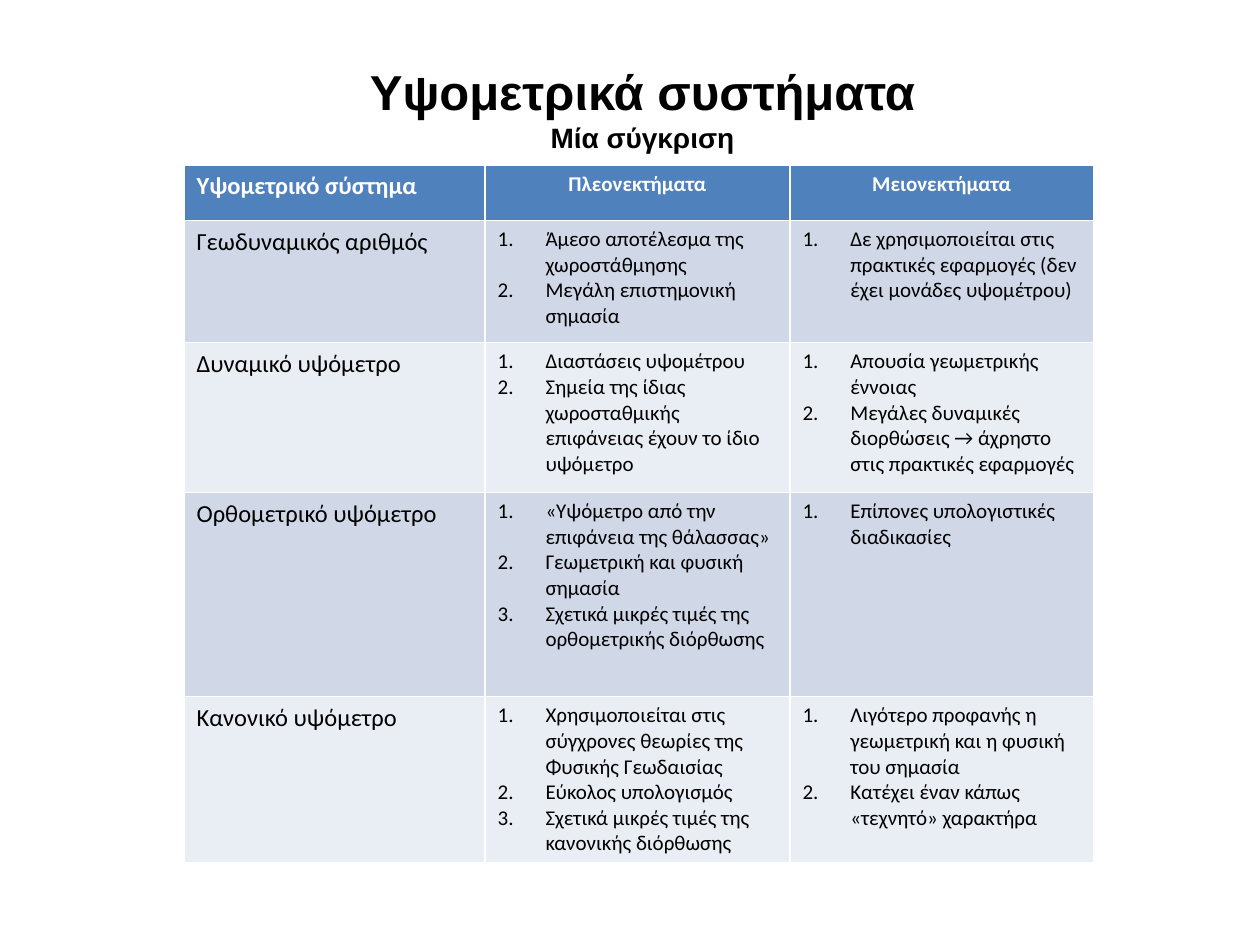
"""Build a slide comparing the advantages and drawbacks of height systems."""
from lxml.etree import SubElement
from pptx import Presentation
from pptx.dml.color import RGBColor
from pptx.enum.text import MSO_ANCHOR, PP_ALIGN
from pptx.oxml.ns import qn
from pptx.util import Inches, Pt

BLACK = RGBColor(0x00, 0x00, 0x00)
WHITE = RGBColor(0xFF, 0xFF, 0xFF)
HEADER_BLUE = RGBColor(0x4F, 0x81, 0xBD)
BANDS = (RGBColor(0xD0, 0xD8, 0xE8), RGBColor(0xE9, 0xED, 0xF4))

TITLE = "Υψομετρικά συστήματα"
SUBTITLE = "Μία σύγκριση"
HEADERS = ("Υψομετρικό σύστημα", "Πλεονεκτήματα", "Μειονεκτήματα")
SYSTEMS = [
    ("Γεωδυναμικός αριθμός",
     ["Άμεσο αποτέλεσμα της χωροστάθμησης",
      "Μεγάλη επιστημονική σημασία"],
     ["Δε χρησιμοποιείται στις πρακτικές εφαρμογές (δεν έχει μονάδες υψομέτρου)"]),
    ("Δυναμικό υψόμετρο",
     ["Διαστάσεις υψομέτρου",
      "Σημεία της ίδιας χωροσταθμικής επιφάνειας έχουν το ίδιο υψόμετρο"],
     ["Απουσία γεωμετρικής έννοιας",
      "Μεγάλες δυναμικές διορθώσεις → άχρηστο στις πρακτικές εφαρμογές"]),
    ("Ορθομετρικό υψόμετρο",
     ["«Υψόμετρο από την επιφάνεια της θάλασσας»",
      "Γεωμετρική και φυσική σημασία",
      "Σχετικά μικρές τιμές της ορθομετρικής διόρθωσης"],
     ["Επίπονες υπολογιστικές διαδικασίες"]),
    ("Κανονικό υψόμετρο",
     ["Χρησιμοποιείται στις σύγχρονες θεωρίες της Φυσικής Γεωδαισίας",
      "Εύκολος υπολογισμός",
      "Σχετικά μικρές τιμές της κανονικής διόρθωσης"],
     ["Λιγότερο προφανής η γεωμετρική και η φυσική του σημασία",
      "Κατέχει έναν κάπως «τεχνητό» χαρακτήρα"]),
]
COLUMN_WIDTHS = (2.39, 2.42, 2.41)
ROW_HEIGHTS = (0.44, 0.97, 1.19, 1.62, 1.19)
NUMBER_INDENT = Inches(0.38)


def write(paragraph, text, size, font="Calibri", color=BLACK, bold=False,
          align=PP_ALIGN.LEFT, numbered=False):
    paragraph.alignment = align
    run = paragraph.add_run()
    run.text = text
    run.font.name = font
    run.font.size = Pt(size)
    run.font.bold = bold
    run.font.color.rgb = color
    if numbered:
        properties = paragraph._p.get_or_add_pPr()
        properties.set("marL", str(NUMBER_INDENT))
        properties.set("indent", str(-NUMBER_INDENT))
        SubElement(properties, qn("a:buAutoNum"), type="arabicPeriod")


def fill_cell(cell, lines, fill, size, **style):
    cell.fill.solid()
    cell.fill.fore_color.rgb = fill
    frame = cell.text_frame
    for index, line in enumerate(lines):
        paragraph = frame.add_paragraph() if index else frame.paragraphs[0]
        write(paragraph, line, size, **style)


def add_title(slide):
    title = slide.shapes.title
    title.left, title.top = Inches(2.81), Inches(0.44)
    title.width, title.height = Inches(4.58), Inches(0.84)
    frame = title.text_frame
    frame.word_wrap = False
    frame.vertical_anchor = MSO_ANCHOR.TOP
    heading = dict(font="Arial", bold=True, align=PP_ALIGN.CENTER)
    write(frame.paragraphs[0], TITLE, 28, **heading)
    write(frame.add_paragraph(), SUBTITLE, 16, **heading)


def add_comparison(slide):
    comparison = slide.shapes.add_table(
        len(ROW_HEIGHTS), len(COLUMN_WIDTHS), Inches(1.46), Inches(1.31),
        Inches(sum(COLUMN_WIDTHS)), Inches(sum(ROW_HEIGHTS))).table
    for column, width in zip(comparison.columns, COLUMN_WIDTHS):
        column.width = Inches(width)
    for row, height in zip(comparison.rows, ROW_HEIGHTS):
        row.height = Inches(height)

    for column, header in enumerate(HEADERS):
        fill_cell(comparison.cell(0, column), [header], HEADER_BLUE,
                  12 if column else 14, color=WHITE, bold=True,
                  align=PP_ALIGN.CENTER if column else PP_ALIGN.LEFT)
    for row, (system, *judgements) in enumerate(SYSTEMS, start=1):
        band = BANDS[(row - 1) % len(BANDS)]
        fill_cell(comparison.cell(row, 0), [system], band, 14)
        for column, points in enumerate(judgements, start=1):
            fill_cell(comparison.cell(row, column), points, band, 12, numbered=True)


def main():
    presentation = Presentation()
    presentation.slide_width, presentation.slide_height = Inches(10), Inches(7.5)
    slide = presentation.slides.add_slide(presentation.slide_layouts[5])
    add_title(slide)
    add_comparison(slide)
    presentation.save("out.pptx")


if __name__ == "__main__":
    main()
